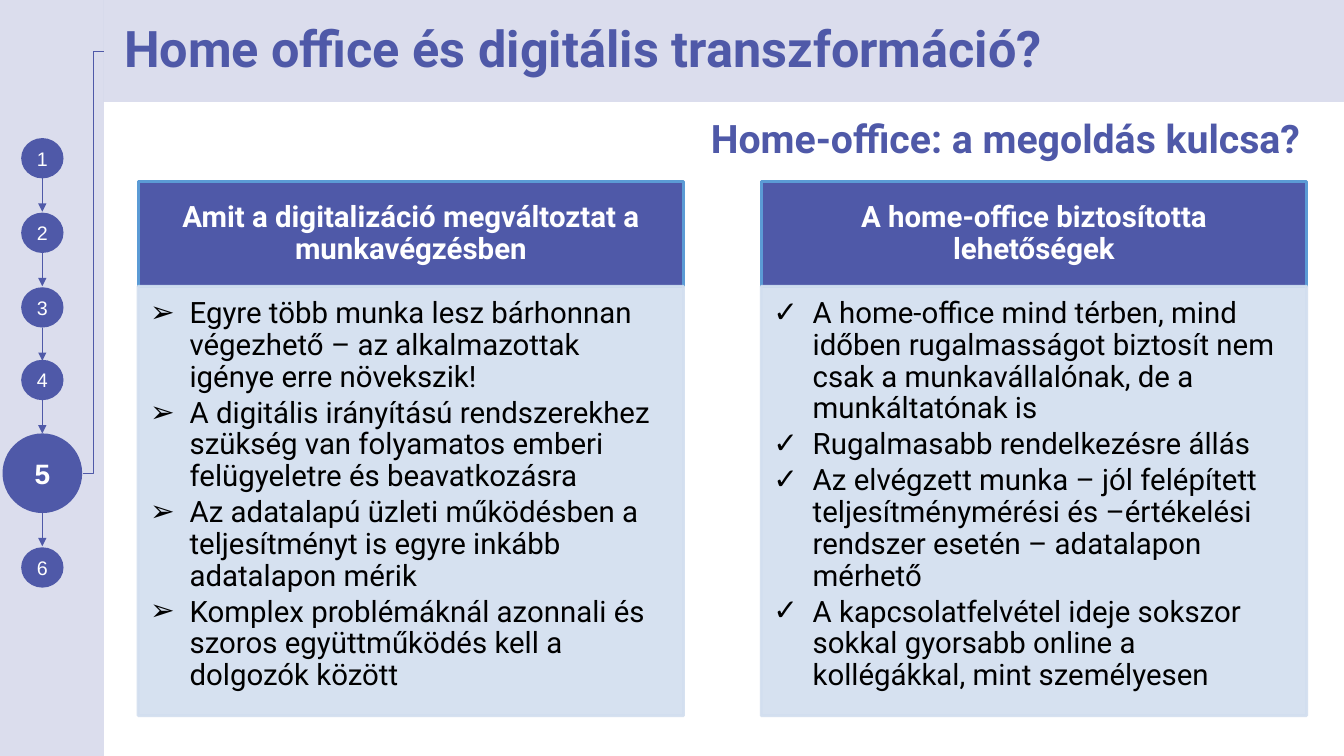
import pptx
import pptx.util
import pptx.dml.color
import pptx.enum.shapes
import pptx.enum.text
import pptx.oxml.ns
from dataclasses import dataclass
from lxml import etree

Inches = pptx.util.Inches
Pt = pptx.util.Pt
qn = pptx.oxml.ns.qn
Shape = pptx.enum.shapes.MSO_SHAPE
Connector = pptx.enum.shapes.MSO_CONNECTOR
Align = pptx.enum.text.PP_ALIGN
Anchor = pptx.enum.text.MSO_ANCHOR


@dataclass(frozen=True)
class Theme:
    indigo: str = "4F59A8"
    border: str = "5B9BD5"
    panel: str = "D2DEEF"
    white: str = "FFFFFF"
    black: str = "000000"
    font: str = "Roboto"
    step_font: str = "Arial"
    title: int = 36
    subtitle: int = 28
    body: int = 21
    current_step: int = 20
    step: int = 14


THEME = Theme()


def paint(fill, color, alpha=100):
    """Apply a solid colour with an opacity in percent."""
    fill.solid()
    fill.fore_color.rgb = pptx.dml.color.RGBColor.from_string(color)
    if alpha < 100:
        rgb = fill._xPr.find(qn("a:solidFill")).find(qn("a:srgbClr"))
        etree.SubElement(rgb, qn("a:alpha"), val=str(alpha * 1000))


def write(frame, *paragraphs, size, color, font=THEME.font, bold=False, align=Align.LEFT,
          anchor=Anchor.MIDDLE, insets=(0.1, 0.05, 0.1, 0.05), spacing=0.9, after=0,
          margin=0, indent=0, bullet=None):
    """Fill a text frame with equally formatted paragraphs."""
    frame.word_wrap = True
    frame.auto_size = pptx.enum.text.MSO_AUTO_SIZE.NONE
    frame.vertical_anchor = anchor
    (frame.margin_left, frame.margin_top,
     frame.margin_right, frame.margin_bottom) = map(Inches, insets)
    for index, text in enumerate(paragraphs):
        paragraph = frame.add_paragraph() if index else frame.paragraphs[0]
        properties = paragraph._p.get_or_add_pPr()
        properties.set("marL", str(Inches(margin)))
        properties.set("indent", str(Inches(indent)))
        if bullet:
            bullet_color = etree.SubElement(properties, qn("a:buClr"))
            etree.SubElement(bullet_color, qn("a:srgbClr"), val=color)
            etree.SubElement(properties, qn("a:buFont"), typeface=THEME.step_font)
            etree.SubElement(properties, qn("a:buChar"), char=bullet)
        paragraph.alignment = align
        paragraph.line_spacing = spacing
        paragraph.space_before = Pt(0)
        paragraph.space_after = Pt(after)
        run = paragraph.add_run()
        run.text = text
        run.font.name, run.font.size, run.font.bold = font, Pt(size), bold
        run.font.color.rgb = pptx.dml.color.RGBColor.from_string(color)


class SlideBuilder:
    def __init__(self, slide, theme):
        self.slide, self.theme = slide, theme

    def title(self, text, box):
        heading = self.slide.shapes.title
        heading.left, heading.top, heading.width, heading.height = map(Inches, box)
        paint(heading.fill, self.theme.indigo, 20)
        write(heading.text_frame, text, size=self.theme.title, color=self.theme.indigo,
              bold=True, margin=0.1)

    def label(self, text, box, **style):
        caption = self.slide.shapes.add_textbox(*map(Inches, box))
        write(caption.text_frame, text, **style)

    def block(self, kind, box, color, alpha=100, border=None):
        block = self.slide.shapes.add_shape(kind, *map(Inches, box))
        block.shadow.inherit = False
        paint(block.fill, color, alpha)
        if border:
            paint(block.line.fill, border, alpha)
            block.line.width = Pt(2)
        else:
            block.line.fill.background()
        return block.text_frame

    def connector(self, kind, start, end, width, arrow=False):
        link = self.slide.shapes.add_connector(kind, *map(Inches, (*start, *end)))
        paint(link.line.fill, self.theme.indigo)
        link.line.width = Pt(width)
        if arrow:
            etree.SubElement(link.line._get_or_add_ln(), qn("a:tailEnd"), type="triangle")
        etree.SubElement(link._element.spPr, qn("a:effectLst"))

    def step(self, number, top, width, height, center, size, bold):
        circle = self.block(Shape.OVAL, (center - width / 2, top, width, height),
                            self.theme.indigo)
        write(circle, str(number), size=size, color=self.theme.white, bold=bold,
              font=self.theme.step_font, align=Align.CENTER, insets=(0, 0, 0, 0), spacing=1)

    def column(self, left, heading, points, bullet):
        header = self.block(Shape.RECTANGLE, (left, 1.8, 5.41, 1.04), self.theme.indigo,
                            border=self.theme.border)
        write(header, heading, size=self.theme.body, color=self.theme.white, bold=True,
              align=Align.CENTER, insets=(0.16, 0.09, 0.16, 0.09), after=7)
        panel = self.block(Shape.RECTANGLE, (left, 2.84, 5.41, 4.26), self.theme.panel,
                           alpha=90, border=self.theme.panel)
        write(panel, *points, size=self.theme.body, color=self.theme.black,
              anchor=Anchor.TOP, insets=(0.12, 0.12, 0.16, 0.18), after=3,
              margin=0.39, indent=-0.39, bullet=bullet)


STEP_TOPS = (1.37, 2.11, 2.85, 3.57, 4.3, 5.43)
CURRENT_STEP = 5
STEP_CENTER = 0.42
ARROW_LENGTH = 0.33

COLUMNS = (
    (1.37, "Amit a digitalizáció megváltoztat a munkavégzésben", (
        "Egyre több munka lesz bárhonnan végezhető – az alkalmazottak igénye erre növekszik!",
        "A digitális irányítású rendszerekhez szükség van folyamatos emberi felügyeletre "
        "és beavatkozásra",
        "Az adatalapú üzleti működésben a teljesítményt is egyre inkább adatalapon mérik",
        "Komplex problémáknál azonnali és szoros együttműködés kell a dolgozók között",
    ), "➢"),
    (7.55, "A home-office biztosította lehetőségek", (
        "A home-office mind térben, mind időben rugalmasságot biztosít nem csak a "
        "munkavállalónak, de a munkáltatónak is",
        "Rugalmasabb rendelkezésre állás",
        "Az elvégzett munka – jól felépített teljesítménymérési és –értékelési rendszer "
        "esetén – adatalapon mérhető",
        "A kapcsolatfelvétel ideje sokszor sokkal gyorsabb online a kollégákkal, "
        "mint személyesen",
    ), "✓"),
)


def main():
    deck = pptx.Presentation()
    deck.slide_width, deck.slide_height = Inches(13.33), Inches(7.5)
    builder = SlideBuilder(deck.slides.add_slide(deck.slide_layouts[5]), THEME)

    # Title and sidebar
    builder.title("Home office és digitális transzformáció?", (1.03, 0, 12.3, 1.01))
    builder.block(Shape.RECTANGLE, (0, 0, 1.03, 7.5), THEME.indigo, alpha=20)
    builder.connector(Connector.ELBOW, (0.82, 4.7), (1.03, 0.51), 0.75)

    # Numbered steps, each with an arrow to the next
    for number, top in enumerate(STEP_TOPS, 1):
        current = number == CURRENT_STEP
        width, height = (0.79, 0.79) if current else (0.42, 0.4)
        builder.step(number, top, width, height, STEP_CENTER,
                     THEME.current_step if current else THEME.step, current)
        if number < len(STEP_TOPS):
            bottom = top + height
            builder.connector(Connector.STRAIGHT, (STEP_CENTER, bottom),
                              (STEP_CENTER, bottom + ARROW_LENGTH), 1, arrow=True)

    # Two columns and the subtitle above them
    for left, heading, points, bullet in COLUMNS:
        builder.column(left, heading, points, bullet)
    builder.label("Home-office: a megoldás kulcsa?", (1.18, 0.95, 11.81, 0.9),
                  size=THEME.subtitle, color=THEME.indigo, bold=True, align=Align.RIGHT)

    deck.save("out.pptx")


if __name__ == "__main__":
    main()
